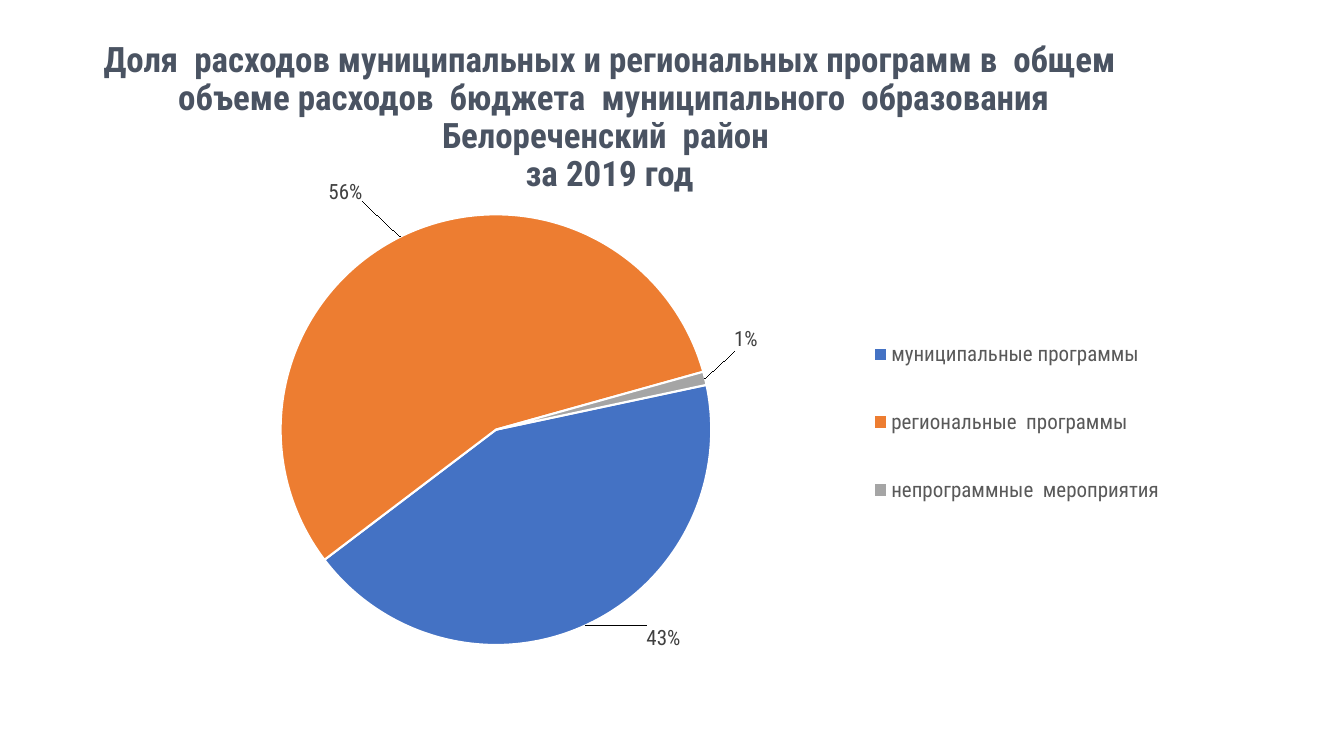
from lxml import etree
from pptx import Presentation
from pptx import util as u
from pptx.chart import data
from pptx.dml import color
from pptx.enum import chart as ch, text
from pptx.oxml import ns

FONT = "Roboto Condensed"


def paint(hex_color):
    return color.RGBColor.from_string(hex_color)


def write(box, content, size, hex_color, bold=False, align=text.PP_ALIGN.CENTER):
    """Fill a shape with one paragraph; a newline becomes a line break."""
    para = box.text_frame.paragraphs[0]
    para.alignment = align
    para.line_spacing = 0.9
    for number, line in enumerate(content.split("\n")):
        if number:
            para.add_line_break()
        span = para.add_run()
        span.text = line
        span.font.name, span.font.size, span.font.bold = FONT, u.Pt(size), bold
        span.font.color.rgb = paint(hex_color)


deck = Presentation()
deck.slide_width, deck.slide_height = u.Cm(33.87), u.Cm(19.05)
page = deck.slides.add_slide(deck.slide_layouts[5])

# Title
title = page.shapes.title
title.left, title.top, title.width, title.height = u.Cm(2.34), u.Cm(1.07), u.Cm(26.04), u.Cm(3.81)
title.text_frame.word_wrap = True
title.text_frame.auto_size = text.MSO_AUTO_SIZE.NONE
title.text_frame.vertical_anchor = text.MSO_ANCHOR.MIDDLE
write(title, "Доля  расходов муниципальных и региональных программ в  общем  объеме расходов  "
      "бюджета  муниципального  образования Белореченский  район \nза 2019 год",
      size=25, hex_color="4A5362", bold=True)

# Spending shares: category, value, colour, label shift as a fraction of the chart
shares = [
    ("муниципальные программы", 43, "4472C4", (0.05, -0.01)),
    ("региональные  программы", 56, "ED7D31", (-0.03, -0.06)),
    ("непрограммные  мероприятия", 1, "A5A5A5", (0.02, -0.05)),
]
chart_data = data.CategoryChartData()
chart_data.categories = [share[0] for share in shares]
chart_data.add_series("Доля расходов", [share[1] for share in shares])
pie = page.shapes.add_chart(ch.XL_CHART_TYPE.PIE, u.Cm(2.03), u.Cm(4.52),
                            u.Cm(29.49), u.Cm(12.62), chart_data).chart
pie.has_title = False
pie.font.name, pie.font.size = "Calibri", u.Pt(10)
plot = pie.plots[0]
plot.vary_by_categories = True
series = plot.series[0]

# Legend
pie.has_legend = True
pie.legend.position = ch.XL_LEGEND_POSITION.RIGHT
pie.legend.include_in_layout = False

# Percent labels
labels = series.data_labels
labels.show_value, labels.show_percentage = False, True
labels.number_format, labels.number_format_is_linked = "0%", False
labels.position = ch.XL_LABEL_POSITION.OUTSIDE_END
for old in labels._element.findall(ns.qn("c:showLeaderLines")):
    labels._element.remove(old)
etree.SubElement(labels._element, ns.qn("c:showLeaderLines")).set("val", "1")

# Slices and their label fonts
label_fonts = [labels.font]
for number, share in enumerate(shares):
    point = series.points[number]
    point.format.fill.solid()
    point.format.fill.fore_color.rgb = paint(share[2])
    point.format.line.color.rgb = paint("FFFFFF")
    point.format.line.width = u.Pt(1.5)
    point.data_label.position = ch.XL_LABEL_POSITION.OUTSIDE_END
    label_fonts.append(point.data_label.font)
for font, hex_color in [(pie.legend.font, "595959")] + [(font, "404040") for font in label_fonts]:
    font.name, font.size = FONT, u.Pt(15)
    font.color.rgb = paint(hex_color)

# Manual layouts: (parent, child index, settings)
layouts = [
    (plot._element.getparent(), 0, dict(layoutTarget="inner", xMode="edge", yMode="edge",
                                        x=0.17, y=0.07, w=0.37, h=0.86)),
    (pie.legend._element, 1, dict(xMode="edge", yMode="edge", x=0.67, y=0.24, w=0.26, h=0.49)),
]
for label, share in zip(labels._element.findall(ns.qn("c:dLbl")), shares):
    label.find(ns.qn("c:showVal")).set("val", "0")
    label.find(ns.qn("c:showPercent")).set("val", "1")
    layouts.append((label, 1, dict(zip("xy", share[3]))))
for parent, place, settings in layouts:
    for old in parent.findall(ns.qn("c:layout")):
        parent.remove(old)
    layout = etree.Element(ns.qn("c:layout"))
    manual = etree.SubElement(layout, ns.qn("c:manualLayout"))
    for name, value in settings.items():
        etree.SubElement(manual, ns.qn("c:" + name)).set("val", str(value))
    parent.insert(place, layout)

# Rotation of the first slice
angle = plot._element.find(ns.qn("c:firstSliceAng"))
if angle is None:
    angle = etree.SubElement(plot._element, ns.qn("c:firstSliceAng"))
angle.set("val", "78")

deck.save("out.pptx")
